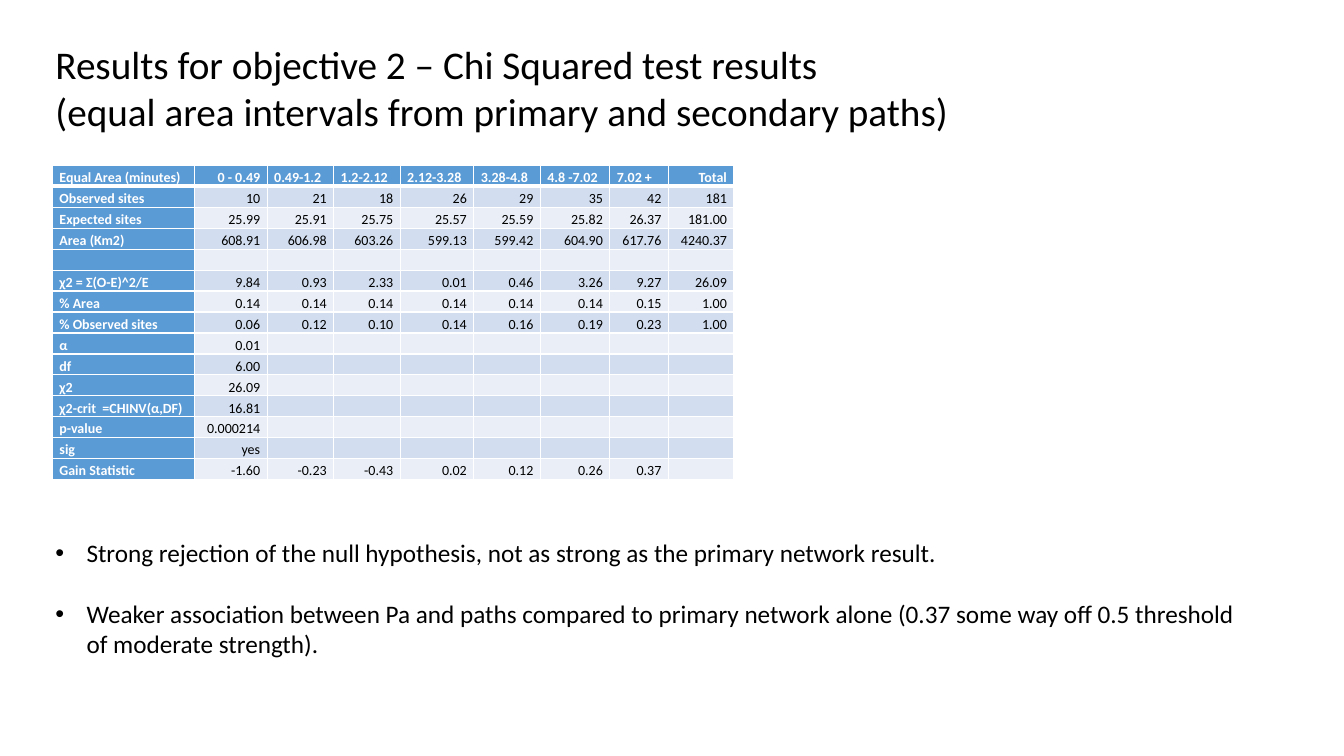
"""Build the chi squared results slide with its table and findings."""
from dataclasses import dataclass

from lxml.etree import SubElement
from pptx import Presentation
from pptx.dml.color import RGBColor
from pptx.enum.text import MSO_ANCHOR, MSO_AUTO_SIZE, PP_ALIGN
from pptx.oxml.ns import qn
from pptx.slide import Slide
from pptx.table import _Cell
from pptx.text.text import TextFrame, _Paragraph
from pptx.util import Inches, Pt


@dataclass(frozen=True)
class Theme:
    font: str = "Calibri"
    ink: str = "000000"
    white: str = "FFFFFF"
    heading: str = "5B9BD5"
    bands: tuple[str, str] = ("EAEFF7", "D2DEEF")
    title_size: int = 28
    body_size: int = 18
    table_size: int = 10


@dataclass(frozen=True)
class Statistic:
    label: str
    values: tuple[str, ...] = ()


THEME = Theme()
TITLE = (
    "Results for objective 2 – Chi Squared test results",
    "(equal area intervals from primary and secondary paths)",
)
INTERVALS = Statistic("Equal Area (minutes)", (
    "0 - 0.49", "0.49-1.2", "1.2-2.12", "2.12-3.28", "3.28-4.8", "4.8 -7.02", "7.02 +", "Total"))
STATISTICS = (
    Statistic("Observed sites", ("10", "21", "18", "26", "29", "35", "42", "181")),
    Statistic("Expected sites", (
        "25.99", "25.91", "25.75", "25.57", "25.59", "25.82", "26.37", "181.00")),
    Statistic("Area (Km2)", (
        "608.91", "606.98", "603.26", "599.13", "599.42", "604.90", "617.76", "4240.37")),
    Statistic(""),
    Statistic("χ2 = Σ(O-E)^2/E", ("9.84", "0.93", "2.33", "0.01", "0.46", "3.26", "9.27", "26.09")),
    Statistic("% Area", ("0.14", "0.14", "0.14", "0.14", "0.14", "0.14", "0.15", "1.00")),
    Statistic("% Observed sites", ("0.06", "0.12", "0.10", "0.14", "0.16", "0.19", "0.23", "1.00")),
    Statistic("α", ("0.01",)),
    Statistic("df", ("6.00",)),
    Statistic("χ2", ("26.09",)),
    Statistic("χ2-crit  =CHINV(α,DF)", ("16.81",)),
    Statistic("p-value", ("0.000214",)),
    Statistic("sig", ("yes",)),
    Statistic("Gain Statistic", ("-1.60", "-0.23", "-0.43", "0.02", "0.12", "0.26", "0.37")),
)
COLUMN_WIDTHS = (1.41, 0.72, 0.66, 0.66, 0.73, 0.66, 0.69, 0.58, 0.65)
TABLE_HEIGHT = 3.12
FINDINGS = (
    "Strong rejection of the null hypothesis, not as strong as the primary network result.",
    "Weaker association between Pa and paths compared to primary network alone "
    "(0.37 some way off 0.5 threshold of moderate strength).",
)


def add_bullet(paragraph: _Paragraph, indent: float) -> None:
    """Give a paragraph a hanging round bullet."""
    properties = paragraph._p.get_or_add_pPr()
    properties.set("marL", str(Inches(indent)))
    properties.set("indent", str(-Inches(indent)))
    SubElement(properties, qn("a:buFont"), typeface="Arial")
    SubElement(properties, qn("a:buChar"), char="•")


def write(frame: TextFrame, lines: tuple[str, ...], *, size: int, color: str = THEME.ink,
          bold: bool = False, align: PP_ALIGN = PP_ALIGN.LEFT, line_spacing: float = 1.0,
          gap: float = 0, bullet_indent: float = 0) -> None:
    """Write one formatted paragraph for each line."""
    for index, line in enumerate(lines):
        paragraph = frame.add_paragraph() if index else frame.paragraphs[0]
        paragraph.alignment = align
        paragraph.line_spacing = line_spacing
        paragraph.space_before = Pt(gap if index else 0)
        if bullet_indent:
            add_bullet(paragraph, bullet_indent)
        if not line:
            SubElement(paragraph._p, qn("a:endParaRPr"), sz=str(size * 100))
            continue
        run = paragraph.add_run()
        run.text = line
        run.font.name = THEME.font
        run.font.size = Pt(size)
        run.font.bold = bold
        run.font.color.rgb = RGBColor.from_string(color)


def set_borders(cell: _Cell, top: float, bottom: float) -> None:
    """Draw white borders around a cell, with the given top and bottom widths."""
    properties = cell._tc.get_or_add_tcPr()
    for side, width in (("L", 1), ("R", 1), ("T", top), ("B", bottom)):
        border = SubElement(properties, qn(f"a:ln{side}"), w=str(Pt(width)))
        fill = SubElement(border, qn("a:solidFill"))
        SubElement(fill, qn("a:srgbClr"), val=THEME.white)


def fill_cell(cell: _Cell, text: str, row: int, column: int) -> None:
    """Format one table cell according to its row and column."""
    is_heading = row == 0 or column == 0
    is_left = column == 0 or (row == 0 and 1 < column < len(COLUMN_WIDTHS) - 1)
    set_borders(cell, top=3 if row == 1 else 1, bottom=3 if row == 0 else 1)
    cell.fill.solid()
    cell.fill.fore_color.rgb = RGBColor.from_string(
        THEME.heading if is_heading else THEME.bands[row % 2])
    cell.margin_left = cell.margin_right = Inches(0.07)
    cell.margin_top = cell.margin_bottom = 0
    cell.vertical_anchor = MSO_ANCHOR.BOTTOM
    write(cell.text_frame, (text,), size=THEME.table_size, bold=is_heading, line_spacing=1.07,
          color=THEME.white if is_heading else THEME.ink,
          align=PP_ALIGN.LEFT if is_left else PP_ALIGN.RIGHT)


def add_title(slide: Slide) -> None:
    """Place and write the slide title."""
    title = slide.shapes.title
    title.left, title.top = Inches(0.45), Inches(0.35)
    title.width, title.height = Inches(12.15), Inches(1.04)
    title.text_frame.auto_size = MSO_AUTO_SIZE.NONE
    title.text_frame.vertical_anchor = MSO_ANCHOR.TOP
    write(title.text_frame, TITLE, size=THEME.title_size)


def add_statistics(slide: Slide) -> None:
    """Add the table of test statistics by interval."""
    rows = (INTERVALS, *STATISTICS)
    table = slide.shapes.add_table(
        len(rows), len(COLUMN_WIDTHS), Inches(0.52), Inches(1.64),
        Inches(sum(COLUMN_WIDTHS)), Inches(TABLE_HEIGHT)).table
    for column, width in zip(table.columns, COLUMN_WIDTHS):
        column.width = Inches(width)
    for row, statistic in enumerate(rows):
        table.rows[row].height = Inches(TABLE_HEIGHT / len(rows))
        texts = (statistic.label, *statistic.values)
        for column in range(len(COLUMN_WIDTHS)):
            text = texts[column] if column < len(texts) else ""
            fill_cell(table.cell(row, column), text, row, column)


def add_findings(slide: Slide) -> None:
    """Add the bulleted findings below the table."""
    findings = slide.shapes.add_textbox(
        Inches(0.45), Inches(5.28), Inches(11.99), Inches(1.32)).text_frame
    findings.word_wrap = True
    write(findings, FINDINGS, size=THEME.body_size, gap=22, bullet_indent=0.31)


def main() -> None:
    """Build and save the presentation."""
    presentation = Presentation()
    presentation.slide_width, presentation.slide_height = Inches(13.33), Inches(7.5)
    slide = presentation.slides.add_slide(presentation.slide_layouts[5])
    add_title(slide)
    add_statistics(slide)
    add_findings(slide)
    presentation.save("out.pptx")


if __name__ == "__main__":
    main()
